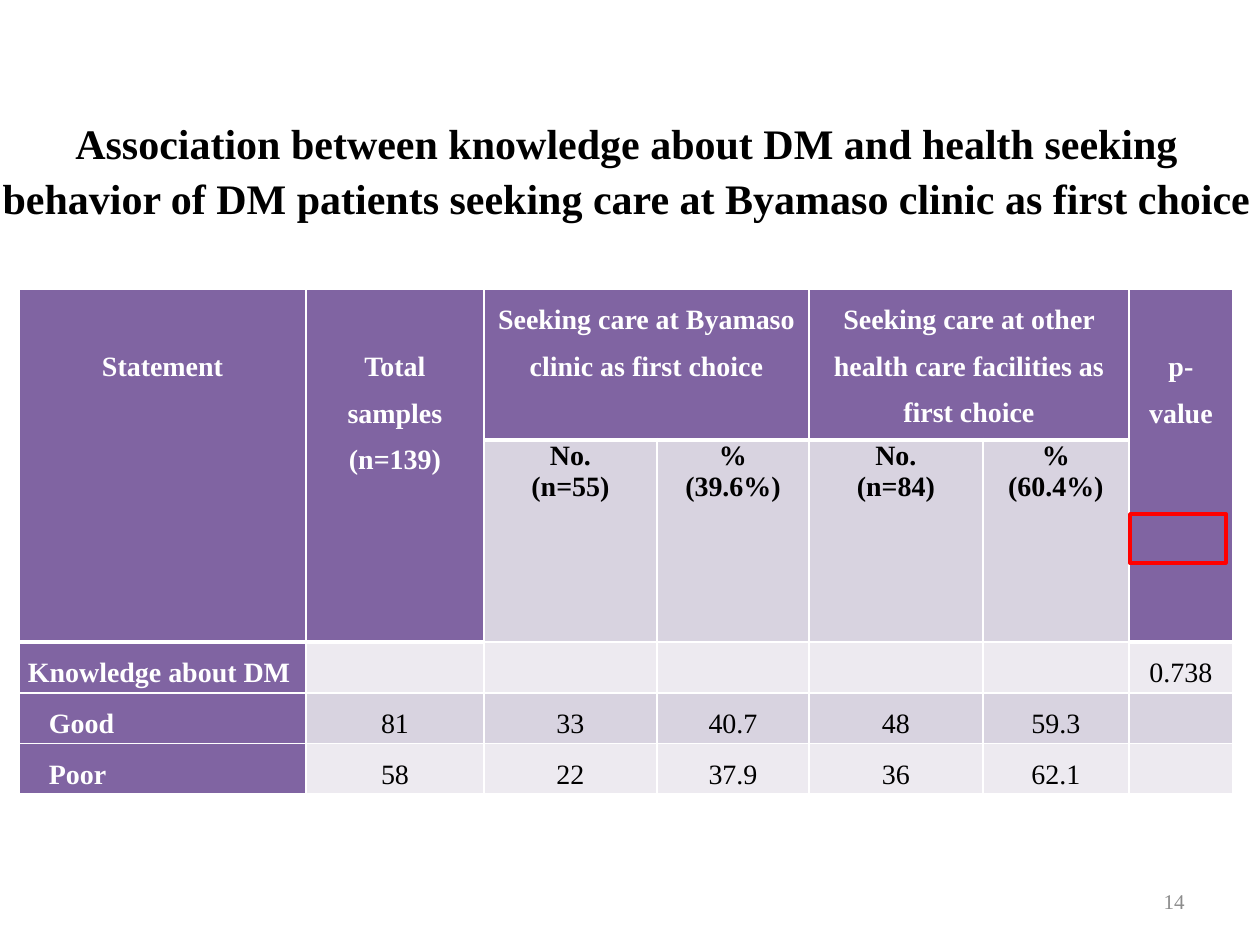
from dataclasses import dataclass

from lxml.etree import SubElement
from pptx import Presentation
from pptx.dml.color import RGBColor
from pptx.enum.shapes import MSO_SHAPE
from pptx.enum.text import MSO_ANCHOR, MSO_AUTO_SIZE, PP_ALIGN
from pptx.oxml.ns import qn
from pptx.util import Emu, Pt


@dataclass(frozen=True)
class Theme:
    font: str = "Times New Roman"
    title_size: int = 24
    table_size: int = 16
    number_size: int = 12
    black: str = "000000"
    white: str = "FFFFFF"
    grey: str = "8C8C8C"
    purple: str = "8064A2"
    dark_band: str = "D8D3E0"
    light_band: str = "EDEAF0"
    red: str = "FF0000"


THEME = Theme()
EMU_PER_PX = 914400 / 126

COLUMN_WIDTHS = [287, 178, 173, 152, 174, 146, 104]
ROW_HEIGHTS = [150, 202, 51, 50, 50]
LINE_HEIGHT = 47
CELL_INSET = 9
INDENT = 21

# First row, first column, last row, last column, paragraphs
HEADERS = [
    (0, 0, 1, 0, ["Statement"]),
    (0, 1, 1, 1, ["Total samples", "(n=139)"]),
    (0, 2, 0, 3, ["Seeking care at Byamaso clinic as first choice"]),
    (0, 4, 0, 5, ["Seeking care at other health care facilities as first choice"]),
    (0, 6, 1, 6, ["p-value"]),
]
SUBHEADERS = [["No.", "(n=55)"], ["%", "(39.6%)"], ["No.", "(n=84)"], ["%", "(60.4%)"]]
BODY = [
    ["Knowledge about DM", "", "", "", "", "", "0.738"],
    ["Good", "81", "33", "40.7", "48", "59.3", ""],
    ["Poor", "58", "22", "37.9", "36", "62.1", ""],
]


def px(length):
    return Emu(round(length * EMU_PER_PX))


def color(value):
    return RGBColor.from_string(value)


def write(paragraph, text, size, text_color, bold=False,
          align=PP_ALIGN.CENTER, spacing=1.0):
    paragraph.alignment = align
    paragraph.line_spacing = spacing
    run = paragraph.add_run()
    run.text = text
    font = run.font
    font.name, font.size, font.bold = THEME.font, Pt(size), bold
    font.color.rgb = color(text_color)


def place(shape, box):
    shape.left, shape.top, shape.width, shape.height = map(px, box)


def add_title(slide, box):
    title = slide.shapes.title
    place(title, box)
    frame = title.text_frame
    frame.word_wrap = True
    frame.auto_size = MSO_AUTO_SIZE.NONE
    frame.vertical_anchor = MSO_ANCHOR.TOP
    write(frame.paragraphs[0],
          "Association between knowledge about DM and health seeking behavior "
          "of DM patients seeking care at Byamaso clinic as first choice",
          THEME.title_size, THEME.black, bold=True, spacing=1.1)


def set_borders(cell, bottom=1):
    properties = cell._tc.get_or_add_tcPr()
    for side, width in (("L", 1), ("R", 1), ("T", 1), ("B", bottom)):
        line = SubElement(properties, qn(f"a:ln{side}"), w=str(Pt(width)))
        fill = SubElement(line, qn("a:solidFill"))
        SubElement(fill, qn("a:srgbClr"), val=THEME.white)


def style_cell(cell, fill, bottom=1):
    set_borders(cell, bottom)
    cell.fill.solid()
    cell.fill.fore_color.rgb = color(fill)
    cell.margin_left = cell.margin_right = px(CELL_INSET)
    cell.margin_top = cell.margin_bottom = 0


def fill_cell(cell, lines, text_color, **style):
    frame = cell.text_frame
    for index, line in enumerate(lines):
        paragraph = frame.add_paragraph() if index else frame.paragraphs[0]
        write(paragraph, line, THEME.table_size, text_color, **style)


def add_headers(table):
    for top, left, bottom, right, lines in HEADERS:
        for row in range(top, bottom + 1):
            for column in range(left, right + 1):
                style_cell(table.cell(row, column), THEME.purple, bottom=3)
        cell = table.cell(top, left)
        cell.merge(table.cell(bottom, right))
        if bottom > top:
            cell.margin_top = px(LINE_HEIGHT)
        fill_cell(cell, lines, THEME.white, bold=True, spacing=1.5)
    for column, lines in enumerate(SUBHEADERS, start=2):
        cell = table.cell(1, column)
        style_cell(cell, THEME.dark_band)
        fill_cell(cell, lines, THEME.black, bold=True)


def add_body(table):
    for row, values in enumerate(BODY, start=2):
        band = THEME.dark_band if row % 2 else THEME.light_band
        for column, value in enumerate(values):
            cell = table.cell(row, column)
            if column == 0:
                style_cell(cell, THEME.purple)
                if row > 2:
                    cell.margin_left = px(CELL_INSET + INDENT)
                fill_cell(cell, [value], THEME.white, bold=True,
                          align=PP_ALIGN.LEFT, spacing=1.5)
            else:
                style_cell(cell, band)
                if value:
                    fill_cell(cell, [value], THEME.black, spacing=1.5)


def add_association_table(slide, left, top):
    frame = slide.shapes.add_table(
        len(ROW_HEIGHTS), len(COLUMN_WIDTHS), px(left), px(top),
        px(sum(COLUMN_WIDTHS)), px(sum(ROW_HEIGHTS)))
    table = frame.table
    for column, width in zip(table.columns, COLUMN_WIDTHS):
        column.width = px(width)
    for row, height in zip(table.rows, ROW_HEIGHTS):
        row.height = px(height)
    add_headers(table)
    add_body(table)


def add_highlight(slide, box):
    frame = slide.shapes.add_shape(MSO_SHAPE.RECTANGLE, *map(px, box))
    frame.shadow.inherit = False
    frame.fill.background()
    frame.line.color.rgb = color(THEME.red)
    frame.line.width = Pt(2)


def add_slide_number(slide, box):
    frame = slide.shapes.add_textbox(*map(px, box)).text_frame
    frame.word_wrap = True
    frame.vertical_anchor = MSO_ANCHOR.MIDDLE
    write(frame.paragraphs[0], "14", THEME.number_size, THEME.grey,
          align=PP_ALIGN.RIGHT)


def main():
    presentation = Presentation()
    presentation.slide_width, presentation.slide_height = px(1260), px(945)
    slide = presentation.slides.add_slide(presentation.slide_layouts[5])
    add_slide_number(slide, (903, 876, 294, 50))
    add_title(slide, (-21, 106, 1295, 115))
    add_association_table(slide, 19, 289)
    add_highlight(slide, (1130, 514, 96, 49))
    presentation.save("out.pptx")


if __name__ == "__main__":
    main()
